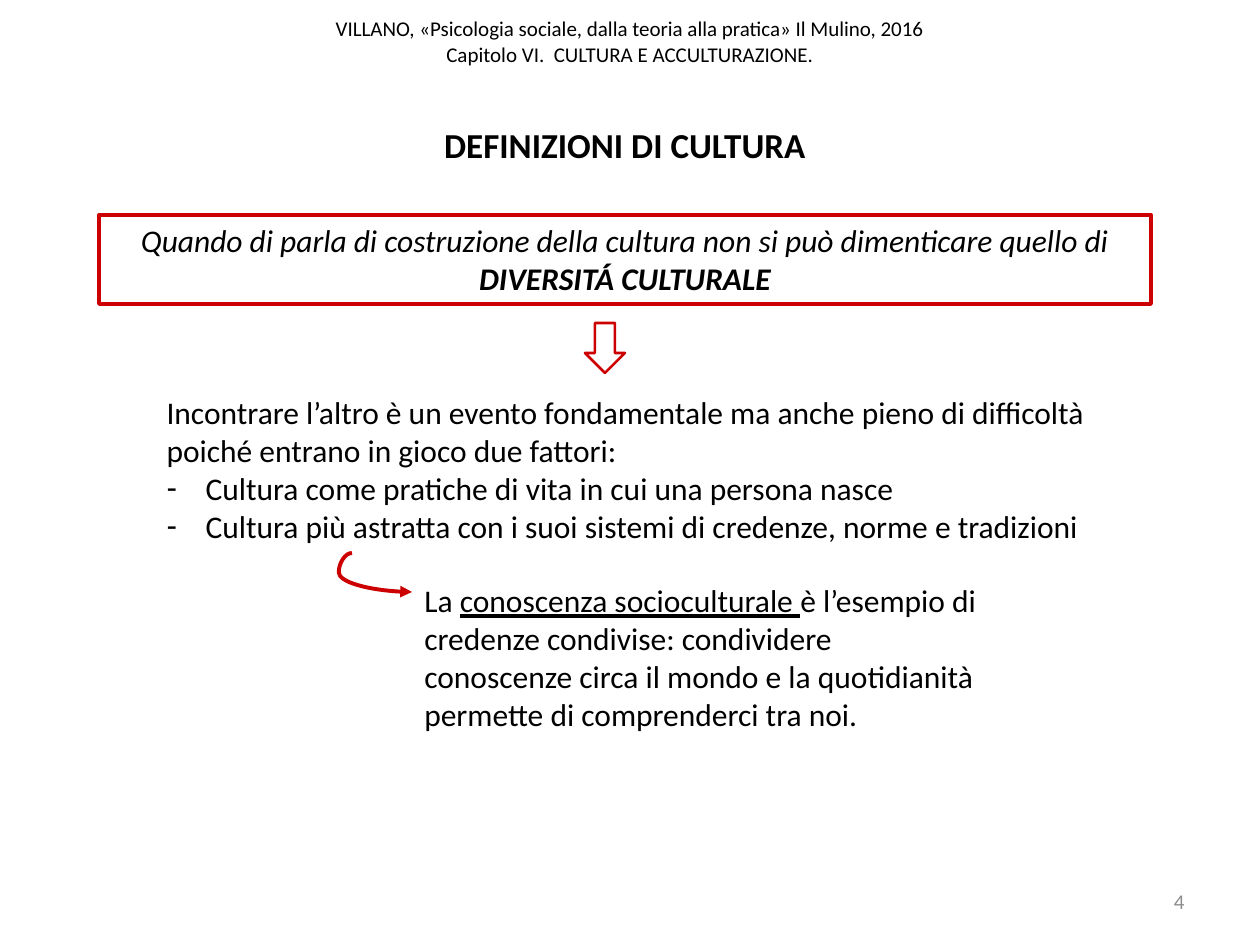
from lxml.etree import SubElement
from pptx import Presentation
from pptx.dml.color import RGBColor
from pptx.enum.shapes import MSO_CONNECTOR, MSO_SHAPE
from pptx.enum.text import MSO_ANCHOR, MSO_AUTO_SIZE, PP_ALIGN
from pptx.oxml.ns import qn
from pptx.util import Emu, Pt

COLORS = {"text": "000000", "red": "CC0000", "grey": "8C8C8C"}


def px(n):
    return Emu(round(n * 914400 / 126))


def color(name):
    return RGBColor.from_string(COLORS[name])


def place(shape, box):
    shape.left, shape.top, shape.width, shape.height = map(px, box)
    return shape


def set_frame(shape, anchor=MSO_ANCHOR.TOP):
    frame = shape.text_frame
    frame.word_wrap = True
    frame.auto_size = MSO_AUTO_SIZE.NONE
    frame.vertical_anchor = anchor
    return frame


def add_runs(para, runs, size=18, ink="text", align=PP_ALIGN.LEFT):
    """Write runs given as (text, style letters), with b, i and u as styles."""
    para.alignment = align
    para.space_before = Pt(0)
    for text, style in runs:
        run = para.add_run()
        run.text = text
        font = run.font
        font.name, font.size = "Calibri", Pt(size)
        font.color.rgb = color(ink)
        font.bold, font.italic = "b" in style, "i" in style
        font.underline = "u" in style


def set_bullet(para, mark=None, indent=0):
    props = para._p.get_or_add_pPr()
    props.set("marL", str(px(indent)))
    props.set("indent", str(-px(indent)))
    if mark:
        SubElement(props, qn("a:buFontTx"))
        SubElement(props, qn("a:buChar"), char=mark)
    else:
        SubElement(props, qn("a:buNone"))


def add_text(slide, box, runs, anchor=MSO_ANCHOR.TOP, **look):
    frame = set_frame(slide.shapes.add_textbox(*map(px, box)), anchor)
    add_runs(frame.paragraphs[0], runs, **look)


def add_header(slide, box, lines):
    shape = slide.shapes.add_textbox(*map(px, box))
    para = set_frame(shape, MSO_ANCHOR.MIDDLE).paragraphs[0]
    for i, line in enumerate(lines):
        if i:
            para.add_line_break()
        add_runs(para, [(line, "")], size=12, align=PP_ALIGN.CENTER)


def add_title(slide, box, text):
    frame = set_frame(place(slide.shapes.title, box))
    add_runs(frame.paragraphs[0], [(text, "b")], size=20, align=PP_ALIGN.CENTER)


def add_list(slide, box, intro, items):
    frame = set_frame(place(slide.placeholders[1], box))
    para = frame.paragraphs[0]
    set_bullet(para)
    add_runs(para, [(intro, "")])
    for item in items:
        para = frame.add_paragraph()
        set_bullet(para, "-", 39)
        add_runs(para, [(item, "")])


def add_outline(slide, kind, box, width):
    shape = slide.shapes.add_shape(kind, *map(px, box))
    shape.shadow.inherit = False
    shape.fill.background()
    shape.line.color.rgb = color("red")
    shape.line.width = Pt(width)
    return shape


def add_curve(slide, start, end, bend):
    """Draw a curved arrow; bend is the turning point as a share of its width."""
    curve = slide.shapes.add_connector(
        MSO_CONNECTOR.CURVE, *map(px, start + end))
    curve.line.color.rgb = color("red")
    curve.line.width = Pt(2.25)
    SubElement(curve.line._get_or_add_ln(), qn("a:tailEnd"), type="triangle")
    props = curve._element.spPr
    SubElement(props, qn("a:effectLst"))
    guides = props.find(qn("a:prstGeom")).get_or_add_avLst()
    SubElement(guides, qn("a:gd"), name="adj1", fmla=f"val {round(bend * 100000)}")


def main():
    deck = Presentation()
    deck.slide_width, deck.slide_height = px(1260), px(945)
    slide = deck.slides.add_slide(deck.slide_layouts[1])

    add_header(slide, (0, -14, 1260, 110), [
        "VILLANO, «Psicologia sociale, dalla teoria alla pratica» Il Mulino, 2016",
        "Capitolo VI.  CULTURA E ACCULTURAZIONE."])
    add_title(slide, (213, 117, 824, 55), "DEFINIZIONI DI CULTURA")

    quote = add_outline(slide, MSO_SHAPE.RECTANGLE, (99, 215, 1052, 89), 2.25)
    add_runs(set_frame(quote).paragraphs[0], [
        ("Quando di parla di costruzione della cultura non si può "
         "dimenticare quello di ", "i"),
        ("DIVERSITÁ CULTURALE", "bi")], align=PP_ALIGN.CENTER)
    add_outline(slide, MSO_SHAPE.DOWN_ARROW, (585, 323, 40, 50), 1.5)

    add_list(slide, (154, 387, 974, 165),
             "Incontrare l’altro è un evento fondamentale ma anche pieno di "
             "difficoltà poiché entrano in gioco due fattori:",
             ["Cultura come pratiche di vita in cui una persona nasce",
              "Cultura più astratta con i suoi sistemi di credenze, norme e "
              "tradizioni"])
    add_curve(slide, (352, 553), (412, 592), -0.22)
    add_text(slide, (412, 575, 580, 165), [
        ("La ", ""),
        ("conoscenza socioculturale ", "u"),
        ("è l’esempio di credenze condivise: condividere conoscenze circa il "
         "mondo e la quotidianità permette di comprenderci tra noi.", "")])
    add_text(slide, (903, 876, 294, 50), [("4", "")], MSO_ANCHOR.MIDDLE,
             size=12, ink="grey", align=PP_ALIGN.RIGHT)

    deck.save("out.pptx")


if __name__ == "__main__":
    main()
